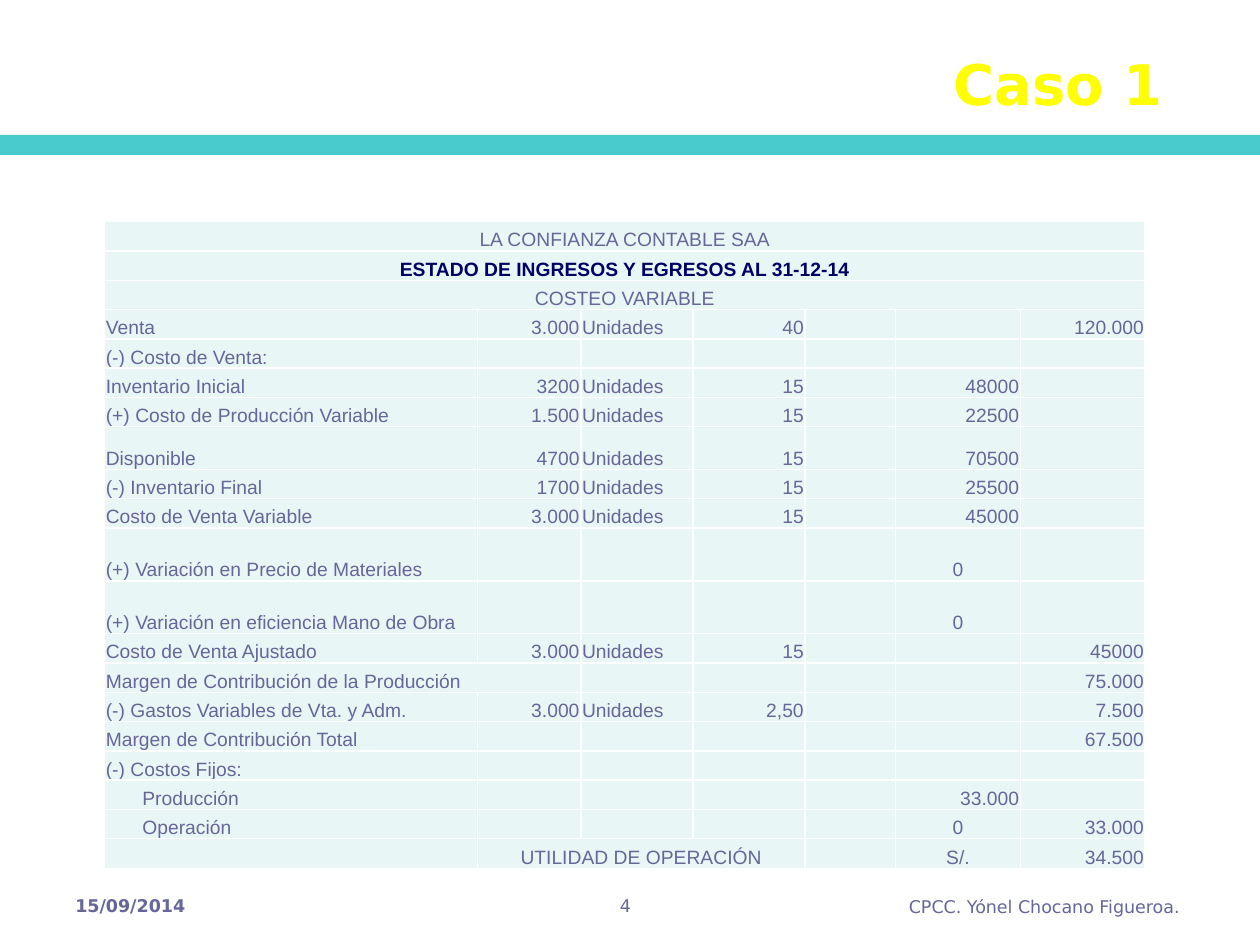
import pptx
import pptx.dml.color
import pptx.enum.shapes
import pptx.enum.text
import pptx.oxml
import pptx.oxml.ns
import pptx.util

Inches = pptx.util.Inches
Pt = pptx.util.Pt
ALIGN = pptx.enum.text.PP_ALIGN
ANCHOR = pptx.enum.text.MSO_ANCHOR

COLORS = {"band": "49CACD", "title": "FFFF00", "text": "666699",
          "heading": "000066", "cell": "E9F6F6", "border": "FFFFFF"}

HEADINGS = ["LA CONFIANZA CONTABLE SAA",
            "ESTADO DE INGRESOS Y EGRESOS AL 31-12-14",
            "COSTEO VARIABLE"]
# Label, quantity, unit price, amount, total
ENTRIES = [
    ("Venta", "3.000", "40", "", "120.000"),
    ("(-) Costo de Venta:", "", "", "", ""),
    ("Inventario Inicial", "3200", "15", "48000", ""),
    ("(+) Costo de Producción Variable", "1.500", "15", "22500", ""),
    ("Disponible", "4700", "15", "70500", ""),
    ("(-) Inventario Final", "1700", "15", "25500", ""),
    ("Costo de Venta Variable", "3.000", "15", "45000", ""),
    ("(+) Variación en Precio de Materiales", "", "", "0", ""),
    ("(+) Variación en eficiencia Mano de Obra", "", "", "0", ""),
    ("Costo de Venta Ajustado", "3.000", "15", "", "45000"),
    ("Margen de Contribución de la Producción", "", "", "", "75.000"),
    ("(-) Gastos Variables de Vta. y Adm.", "3.000", "2,50", "", "7.500"),
    ("Margen de Contribución Total", "", "", "", "67.500"),
    ("(-) Costos Fijos:", "", "", "", ""),
    ("Producción", "", "", "33.000", ""),
    ("Operación", "", "", "0", "33.000"),
]
RESULT = ["", "UTILIDAD DE OPERACIÓN", "", "", "", "S/.", "34.500"]
INDENTED = ("Producción", "Operación")
CENTERED = ("0", "S/.", "UTILIDAD DE OPERACIÓN")
COLUMN_WIDTHS = [2.96, 0.82, 0.89, 0.89, 0.72, 0.99, 0.99]
COLUMN_ALIGNS = [ALIGN.LEFT, ALIGN.RIGHT, ALIGN.LEFT, ALIGN.RIGHT,
                 ALIGN.LEFT, ALIGN.RIGHT, ALIGN.RIGHT]
TALL_ROWS = {7: 0.34, 10: 0.42, 11: 0.42, 19: 0.24}


def rgb(name):
    return pptx.dml.color.RGBColor.from_string(COLORS[name])


def write(frame, text, align, color="text", **formats):
    para = frame.paragraphs[0]
    para.alignment = align
    span = para.add_run()
    span.text = text
    for name, value in formats.items():
        setattr(span.font, name, value)
    span.font.color.rgb = rgb(color)


def add_text(page, box, text, align, anchor=ANCHOR.TOP, **formats):
    frame = page.shapes.add_textbox(*map(Inches, box)).text_frame
    frame.word_wrap = True
    frame.vertical_anchor = anchor
    write(frame, text, align, name="DejaVu Sans", **formats)


def add_header(page, box):
    left, top, width, height = box
    band = page.shapes.add_shape(
        pptx.enum.shapes.MSO_SHAPE.RECTANGLE,
        Inches(left), Inches(top + 1.07), Inches(width), Inches(0.16))
    band.shadow.inherit = False
    band.fill.solid()
    band.fill.fore_color.rgb = rgb("band")
    band.line.fill.background()
    add_text(page, (left + 0.69, top + 0.35, 8.64, 0.62), "Caso 1", ALIGN.RIGHT,
             ANCHOR.MIDDLE, color="title", size=Pt(32), bold=True)


def style_cell(cell):
    properties = cell._tc.get_or_add_tcPr()
    for side in ("L", "R", "T", "B"):
        properties.append(pptx.oxml.parse_xml(
            f'<a:ln{side} {pptx.oxml.ns.nsdecls("a")} w="12700"><a:solidFill>'
            f'<a:srgbClr val="{COLORS["border"]}"/></a:solidFill></a:ln{side}>'))
    cell.fill.solid()
    cell.fill.fore_color.rgb = rgb("cell")
    margins = {"margin_left": 0.01, "margin_right": 0.01,
               "margin_top": 0.01, "margin_bottom": 0}
    for name, value in margins.items():
        setattr(cell, name, Inches(value))
    cell.vertical_anchor = ANCHOR.BOTTOM


def fill_cell(cell, text, align, **formats):
    if text:
        write(cell.text_frame, text, align, name="Arial", size=Pt(11), **formats)
    else:
        # An empty cell keeps the small size so that its row does not grow
        cell.text_frame.paragraphs[0]._p.append(pptx.oxml.parse_xml(
            f'<a:endParaRPr {pptx.oxml.ns.nsdecls("a")} sz="1100"/>'))


def entry_cells(label, quantity, price, amount, total):
    unit = "Unidades" if quantity else ""
    return [label, quantity, unit, price, "", amount, total]


def add_statement(page, box):
    left, top, width, height = box
    rows = [[heading] + [""] * 6 for heading in HEADINGS]
    rows += [entry_cells(*entry) for entry in ENTRIES] + [RESULT]
    table = page.shapes.add_table(
        len(rows), len(COLUMN_WIDTHS), *map(Inches, box)).table
    table.first_row = table.horz_banding = False
    for column, column_width in zip(table.columns, COLUMN_WIDTHS):
        column.width = Inches(column_width)
    row_height = (height - sum(TALL_ROWS.values())) / (len(rows) - len(TALL_ROWS))

    for r, texts in enumerate(rows):
        table.rows[r].height = Inches(TALL_ROWS.get(r, row_height))
        for c, text in enumerate(texts):
            cell = table.cell(r, c)
            style_cell(cell)
            centered = r < len(HEADINGS) or text in CENTERED
            formats = {"color": "heading", "bold": True} if r == 1 else {}
            fill_cell(cell, text, ALIGN.CENTER if centered else COLUMN_ALIGNS[c],
                      **formats)
            if text in INDENTED:
                cell.margin_left = Inches(0.3)

    # Merged cells: headings, production margin and result
    spans = [(r, 0, 6) for r in range(len(HEADINGS))] + [(13, 0, 1), (19, 1, 3)]
    for r, first, last in spans:
        table.cell(r, first).merge(table.cell(r, last))


def add_footer(page, box):
    left, top, width, height = box
    add_text(page, (left, top, 2.33, height), "15/09/2014", ALIGN.LEFT,
             size=Pt(10), bold=True)
    add_text(page, (left + 3.3, top, 2.33, height), "4", ALIGN.CENTER, size=Pt(10))
    add_text(page, (left + width - 3.17, top + 0.01, 3.17, height),
             "CPCC. Yónel Chocano Figueroa.", ALIGN.RIGHT, size=Pt(10))


def main():
    deck = pptx.Presentation()
    deck.slide_width, deck.slide_height = Inches(10), Inches(7.5)
    page = deck.slides.add_slide(deck.slide_layouts[6])
    add_header(page, (0, 0, 10, 1.23))
    add_statement(page, (0.83, 1.76, 8.26, 5.14))
    add_footer(page, (0.5, 7.05, 8.96, 0.35))
    deck.save("out.pptx")


if __name__ == "__main__":
    main()
